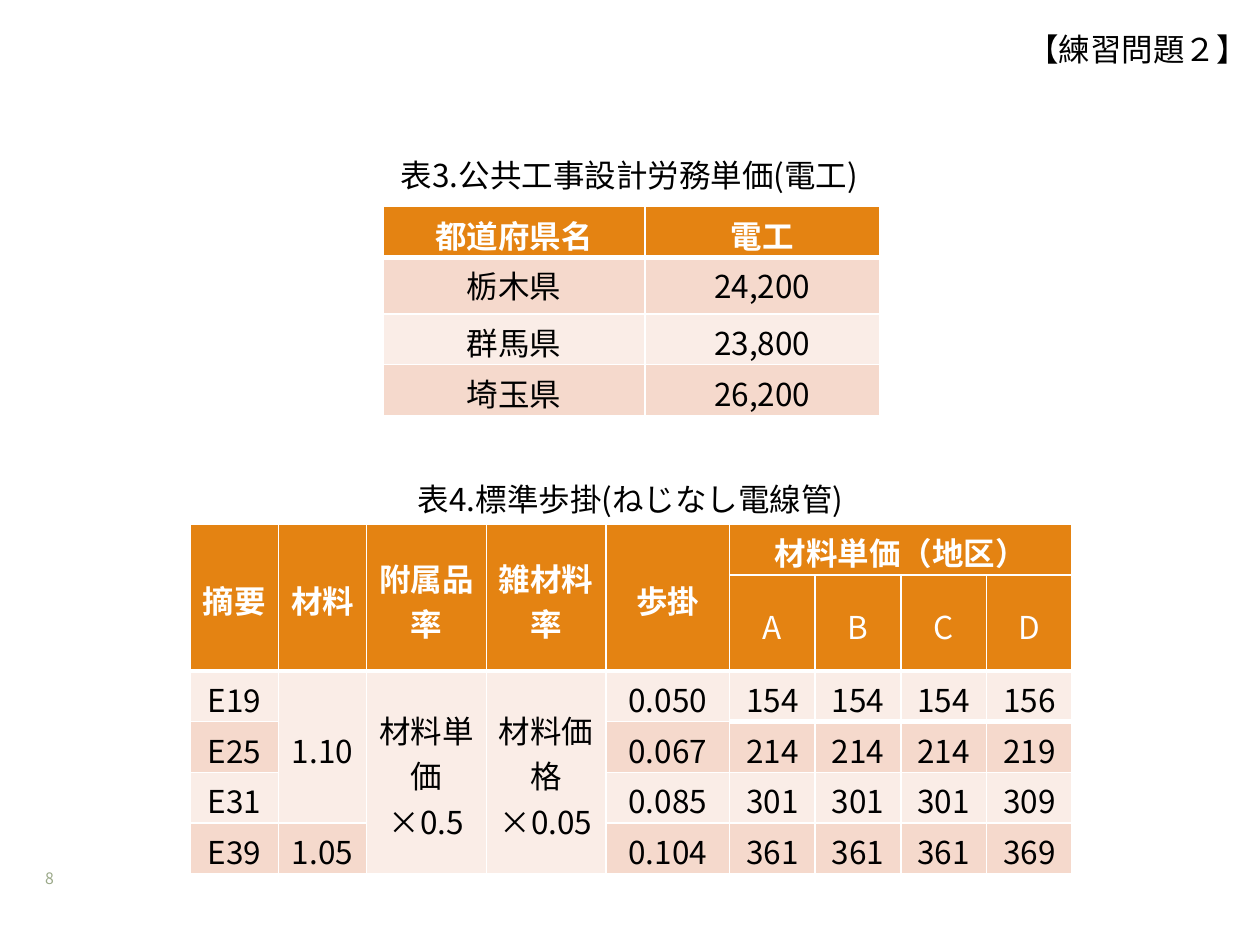
from lxml import etree
from pptx import Presentation
from pptx.dml.color import RGBColor
from pptx.enum.text import MSO_ANCHOR, PP_ALIGN
from pptx.oxml.ns import qn
from pptx.util import Inches, Pt

LEFT, CENTER, RIGHT = PP_ALIGN.LEFT, PP_ALIGN.CENTER, PP_ALIGN.RIGHT
TOP, MIDDLE = MSO_ANCHOR.TOP, MSO_ANCHOR.MIDDLE
FONT = "Noto Sans CJK JP"
BLACK = RGBColor(0x00, 0x00, 0x00)
WHITE = RGBColor(0xFF, 0xFF, 0xFF)
ORANGE = RGBColor(0xE4, 0x83, 0x12)
PALE = RGBColor(0xFA, 0xED, 0xE7)
PINK = RGBColor(0xF5, 0xD9, 0xCC)
GRAY_GREEN = RGBColor(0x9A, 0xA8, 0x88)

# text, box, alignment, anchor, size, colour
LABELS = [
    ("【練習問題２】", (8.03, 0.19, 1.97, 0.4), RIGHT, MIDDLE, 18, BLACK),
    ("表3.公共工事設計労務単価(電工)", (2.6, 1.19, 4.79, 0.4), CENTER, MIDDLE, 18, BLACK),
    ("表4.標準歩掛(ねじなし電線管)", (2.78, 3.76, 4.45, 0.4), CENTER, MIDDLE, 18, BLACK),
    ("8", (0.26, 6.86, 0.59, 0.22), LEFT, MIDDLE, 9, GRAY_GREEN),
]

# None marks a cell covered by a merge; spans map (row, column) to (rows, columns)
WAGES = {
    "at": (3.04, 1.64),
    "cols": [2.08, 1.86],
    "heights": [0.4, 0.45, 0.4, 0.4],
    "rows": [
        ["都道府県名", "電工"],
        ["栃木県", "24,200"],
        ["群馬県", "23,800"],
        ["埼玉県", "26,200"],
    ],
    "header_rows": 1,
    "bands": (PINK, PALE),
    "spans": {},
    "middle": [],
    "thick_below": [(0, 0), (0, 1)],
}
RATES = {
    "at": (1.51, 4.16),
    "cols": [0.7, 0.7, 0.95, 0.95, 0.98] + [0.68] * 4,
    "heights": [0.39, 0.71] + [0.4] * 4,
    "rows": [
        ["摘要", "材料", "附属品率", "雑材料率", "歩掛", "材料単価（地区）", None, None, None],
        [None, None, None, None, None, "A", "B", "C", "D"],
        ["E19", "1.10", "材料単価×0.5", "材料価格×0.05", "0.050", "154", "154", "154", "156"],
        ["E25", None, None, None, "0.067", "214", "214", "214", "219"],
        ["E31", None, None, None, "0.085", "301", "301", "301", "309"],
        ["E39", "1.05", None, None, "0.104", "361", "361", "361", "369"],
    ],
    "header_rows": 2,
    "bands": (PALE, PINK),
    "spans": {**{(0, c): (2, 1) for c in range(5)}, (0, 5): (1, 4),
              (2, 1): (3, 1), (2, 2): (4, 1), (2, 3): (4, 1)},
    "middle": [(0, c) for c in range(5)] + [(1, c) for c in range(5, 9)]
              + [(2, 1), (2, 2), (2, 3), (5, 1)],
    "thick_below": [(1, c) for c in range(9)] + [(2, c) for c in range(5, 9)],
}


def write(tf, text, align, size, color, bold=False):
    p = tf.paragraphs[0]
    p.alignment = align
    r = p.add_run()
    r.text = text
    look = {"name": FONT, "size": Pt(size), "bold": bold}
    for key, value in look.items():
        setattr(r.font, key, value)
    r.font.color.rgb = color
    etree.SubElement(r.font._element, qn("a:ea")).set("typeface", FONT)


def set_borders(cell, top, bottom):
    """Draw white cell borders; must run before the fill is set."""
    tcPr = cell._tc.get_or_add_tcPr()
    for side, width in (("L", 1), ("R", 1), ("T", top), ("B", bottom)):
        ln = etree.SubElement(tcPr, qn(f"a:ln{side}"), w=str(Pt(width)))
        solid = etree.SubElement(ln, qn("a:solidFill"))
        etree.SubElement(solid, qn("a:srgbClr"), val=str(WHITE))


def add_label(s, text, box, align, anchor, size, color):
    tf = s.shapes.add_textbox(*map(Inches, box)).text_frame
    tf.word_wrap = True
    tf.vertical_anchor = anchor
    write(tf, text, align, size, color)


def add_grid(s, data):
    rows, cols, heights = data["rows"], data["cols"], data["heights"]
    size = (sum(cols), sum(heights))
    table = s.shapes.add_table(len(rows), len(cols),
                               *map(Inches, data["at"] + size)).table
    for column, width in zip(table.columns, cols):
        column.width = Inches(width)
    for row, height in zip(table.rows, heights):
        row.height = Inches(height)
    for (r, c), (down, across) in data["spans"].items():
        table.cell(r, c).merge(table.cell(r + down - 1, c + across - 1))

    thick = data["thick_below"]
    for r, row in enumerate(rows):
        header = r < data["header_rows"]
        band = data["bands"][(r - data["header_rows"]) % 2]
        for c, text in enumerate(row):
            cell = table.cell(r, c)
            set_borders(cell, 3 if (r - 1, c) in thick else 1,
                        3 if (r, c) in thick else 1)
            cell.fill.solid()
            cell.fill.fore_color.rgb = ORANGE if header else band
            cell.margin_top, cell.margin_bottom = Inches(0.04), 0
            cell.vertical_anchor = MIDDLE if (r, c) in data["middle"] else TOP
            if text:
                write(cell.text_frame, text, CENTER, 18,
                      WHITE if header else BLACK, r == 0)


prs = Presentation()
prs.slide_width, prs.slide_height = Inches(10), Inches(7.5)
s = prs.slides.add_slide(prs.slide_layouts[6])
for data in (WAGES, RATES):
    add_grid(s, data)
for label in LABELS:
    add_label(s, *label)
prs.save("out.pptx")
